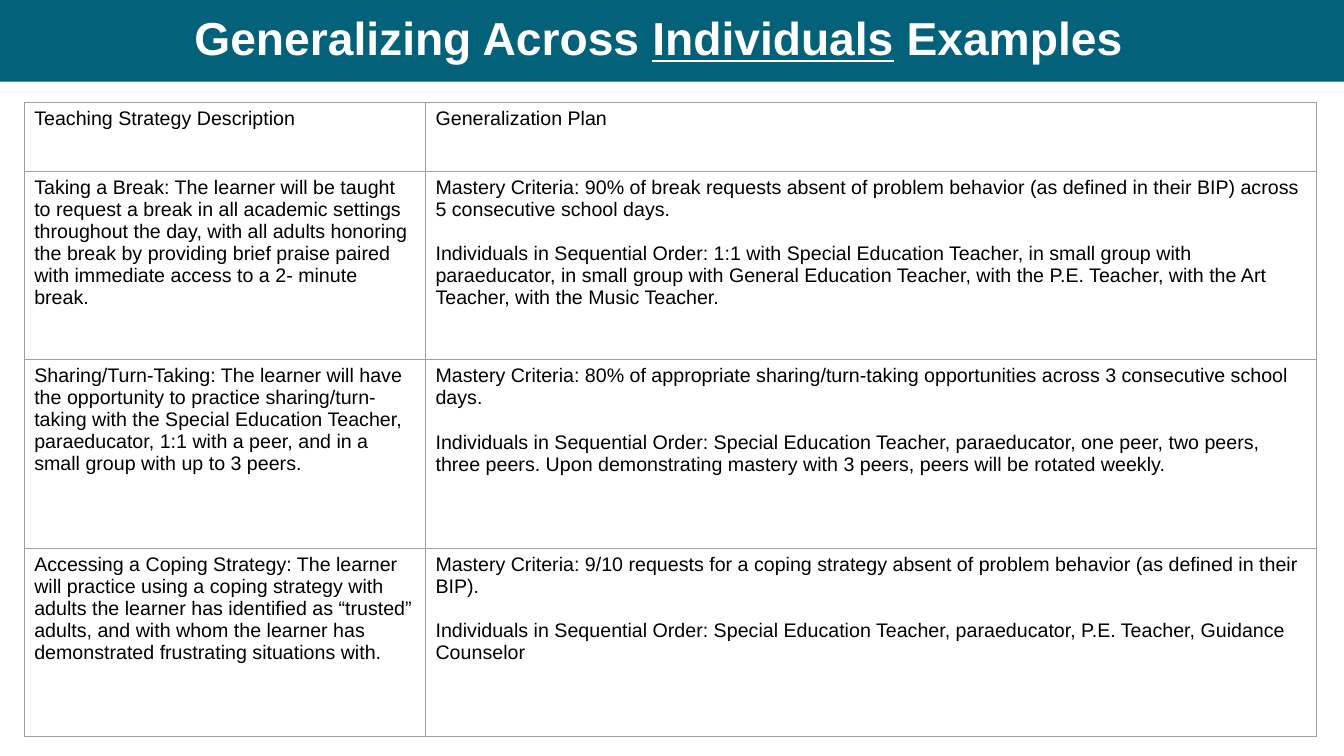
"""Build the slide of generalization examples across individuals."""
from lxml.etree import SubElement
from pptx import Presentation
from pptx.dml.color import RGBColor
from pptx.enum.shapes import MSO_SHAPE
from pptx.enum.text import MSO_ANCHOR, MSO_AUTO_SIZE, PP_ALIGN
from pptx.oxml.ns import qn
from pptx.util import Inches, Pt

TEAL = RGBColor(0x03, 0x61, 0x7A)
WHITE = RGBColor(0xFF, 0xFF, 0xFF)
BLACK = RGBColor(0x00, 0x00, 0x00)
GRAY = RGBColor(0x9E, 0x9E, 0x9E)

TITLE_FORMAT = {"name": "Arial", "size": Pt(33), "bold": True}
CELL_FORMAT = {"name": "Arial", "size": Pt(14), "bold": False}
COLS = [3.98, 8.84]
ROWS = [0.68] + [1.87] * 3
BANNER_H = Inches(0.81)

EXAMPLES = [
    (["Teaching Strategy Description"], ["Generalization Plan"]),
    (["Taking a Break: The learner will be taught to request a break in all academic settings "
      "throughout the day, with all adults honoring the break by providing brief praise paired "
      "with immediate access to a 2- minute break."],
     ["Mastery Criteria: 90% of break requests absent of problem behavior (as defined in their "
      "BIP) across 5 consecutive school days.",
      "Individuals in Sequential Order: 1:1 with Special Education Teacher, in small group with "
      "paraeducator, in small group with General Education Teacher, with the P.E. Teacher, with "
      "the Art Teacher, with the Music Teacher."]),
    (["Sharing/Turn-Taking: The learner will have the opportunity to practice "
      "sharing/turn-taking with the Special Education Teacher, paraeducator, 1:1 with a peer, "
      "and in a small group with up to 3 peers."],
     ["Mastery Criteria: 80% of appropriate sharing/turn-taking opportunities across 3 "
      "consecutive school days.",
      "Individuals in Sequential Order: Special Education Teacher, paraeducator, one peer, two "
      "peers, three peers. Upon demonstrating mastery with 3 peers, peers will be rotated "
      "weekly."]),
    (["Accessing a Coping Strategy: The learner will practice using a coping strategy with "
      "adults the learner has identified as “trusted” adults, and with whom the learner has "
      "demonstrated frustrating situations with."],
     ["Mastery Criteria: 9/10 requests for a coping strategy absent of problem behavior (as "
      "defined in their BIP).",
      "Individuals in Sequential Order: Special Education Teacher, paraeducator, P.E. Teacher, "
      "Guidance Counselor"]),
]


def add_run(p, text, fmt, color):
    r = p.add_run()
    r.text = text
    for key, value in fmt.items():
        setattr(r.font, key, value)
    r.font.color.rgb = color
    return r


def add_borders(cell):
    tcPr = cell._tc.get_or_add_tcPr()
    for side in ("a:lnL", "a:lnR", "a:lnT", "a:lnB"):
        ln = SubElement(tcPr, qn(side), w=str(Pt(0.75)))
        SubElement(SubElement(ln, qn("a:solidFill")), qn("a:srgbClr"), val=str(GRAY))


prs = Presentation()
prs.slide_width, prs.slide_height = Inches(13.33), Inches(7.5)
s = prs.slides.add_slide(prs.slide_layouts[5])

title = s.shapes.title
title.left, title.top = Inches(0.37), 0
title.width, title.height = Inches(12.32), BANNER_H
tf = title.text_frame
tf.auto_size = MSO_AUTO_SIZE.NONE
tf.vertical_anchor = MSO_ANCHOR.MIDDLE
p = tf.paragraphs[0]
p.alignment, p.line_spacing = PP_ALIGN.CENTER, 0.9
for text, underline in [("Generalizing Across ", False), ("Individuals", True), (" Examples", False)]:
    add_run(p, text, TITLE_FORMAT, WHITE).font.underline = underline

banner = s.shapes.add_shape(MSO_SHAPE.RECTANGLE, 0, 0, prs.slide_width, BANNER_H)
banner.shadow.inherit = False
banner.fill.solid()
banner.fill.fore_color.rgb = TEAL
banner.line.fill.background()
title.element.addprevious(banner.element)

table = s.shapes.add_table(len(ROWS), len(COLS), Inches(0.24), Inches(1.02),
                           Inches(sum(COLS)), Inches(sum(ROWS))).table
table.first_row = table.horz_banding = False
for col, width in zip(table.columns, COLS):
    col.width = Inches(width)
for row, height, example in zip(table.rows, ROWS, EXAMPLES):
    row.height = Inches(height)
    for cell, paragraphs in zip(row.cells, example):
        add_borders(cell)
        cell.fill.background()
        tf = cell.text_frame
        for i, text in enumerate(paragraphs):
            p = tf.add_paragraph() if i else tf.paragraphs[0]
            p.space_before = Pt(16 if i else 0)
            add_run(p, text, CELL_FORMAT, BLACK)

prs.save("out.pptx")
